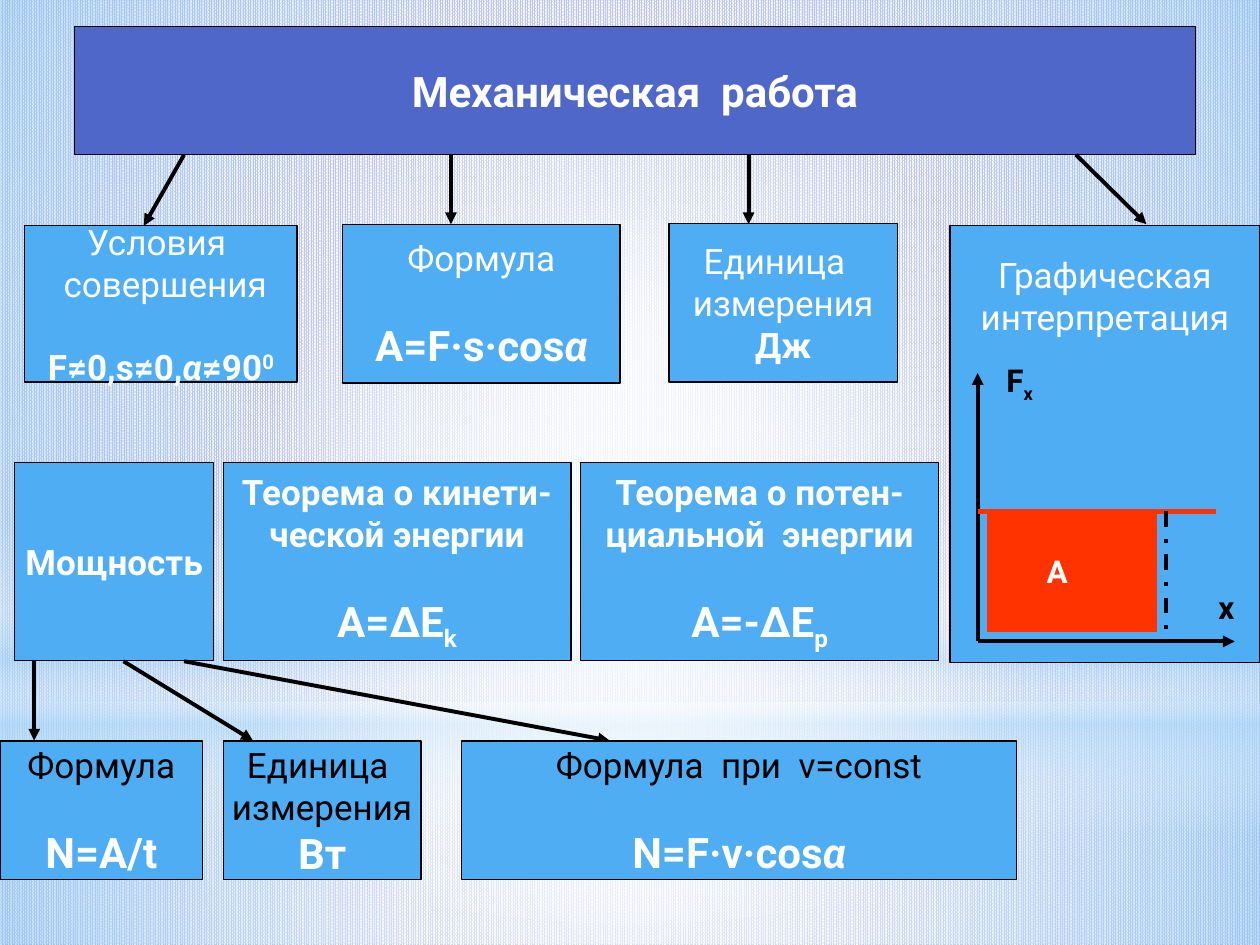
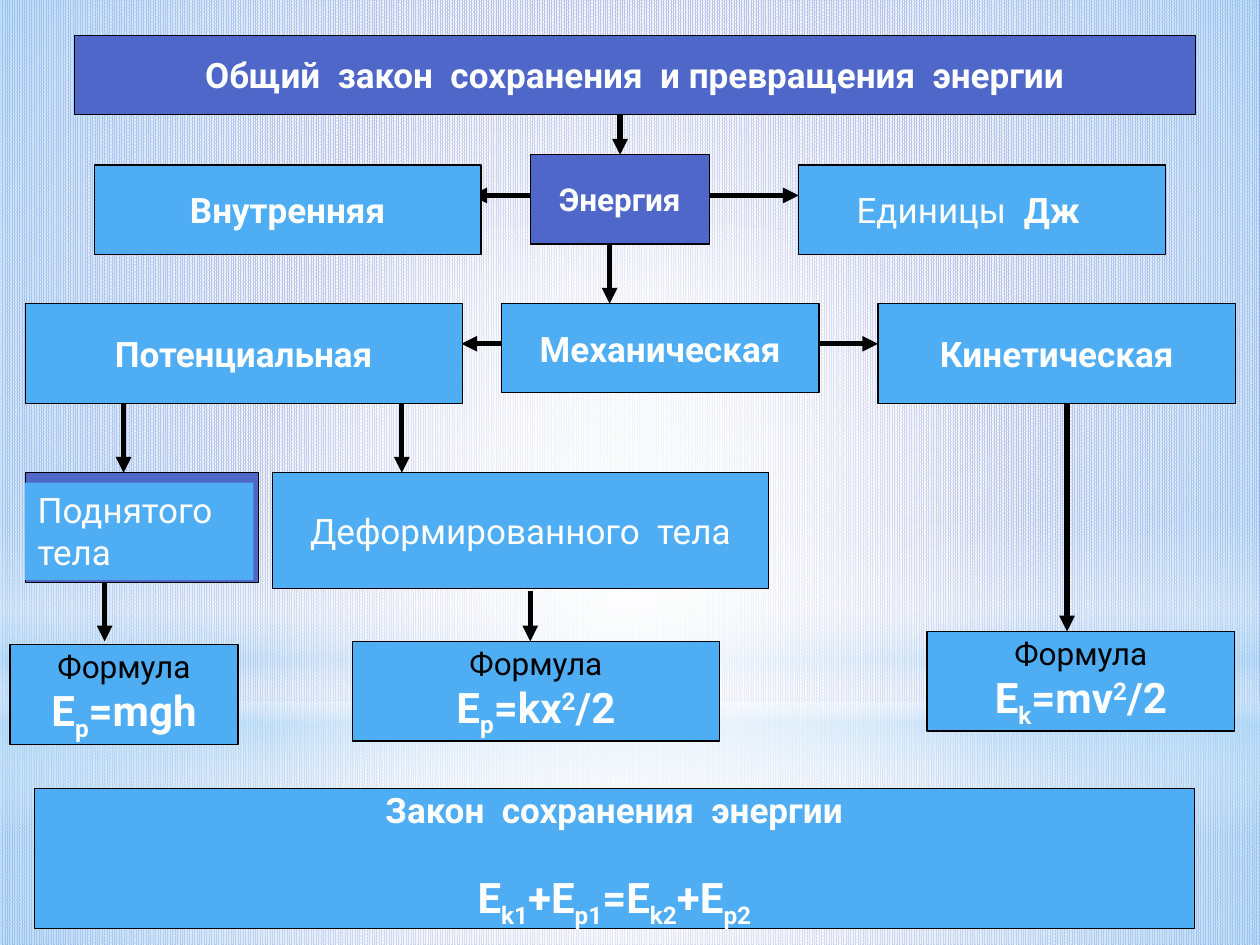
from collections import namedtuple
from functools import partial

from lxml import etree
from pptx import Presentation
from pptx.dml.color import RGBColor
from pptx.enum import dml, shapes, text
from pptx.oxml import parse_xml
from pptx.oxml.ns import nsdecls, qn
from pptx.util import Cm, Pt

INDIGO = RGBColor(0x4E, 0x67, 0xC8)
SKY = RGBColor(0x4F, 0xAD, 0xF3)
PALE = RGBColor(0xB4, 0xDC, 0xFA)
RED = RGBColor(0xFF, 0x33, 0x00)
WHITE = RGBColor(0xFF, 0xFF, 0xFF)
BLACK = RGBColor(0x00, 0x00, 0x00)
FONT = "Roboto"
BLANK_LINE = Pt(23.5)
CENTER, LEFT = text.PP_ALIGN.CENTER, text.PP_ALIGN.LEFT
MIDDLE, TOP = text.MSO_ANCHOR.MIDDLE, text.MSO_ANCHOR.TOP
RECTANGLE, OVAL = shapes.MSO_SHAPE.RECTANGLE, shapes.MSO_SHAPE.OVAL

Run = namedtuple("Run", "text size color bold italic base",
                 defaults=(20, WHITE, False, False, 0))
strong = partial(Run, bold=True)
formula = partial(strong, size=24)
sub = partial(formula, base=-25)
sup = partial(formula, base=30)
dark = partial(Run, color=BLACK)
axis_name = partial(strong, size=18, color=BLACK)


def write(frame, lines, align=CENTER, anchor=MIDDLE, wrap=False, gap=False):
    frame.word_wrap = wrap
    frame.auto_size = text.MSO_AUTO_SIZE.NONE
    frame.vertical_anchor = anchor
    for number, line in enumerate(lines):
        paragraph = frame.add_paragraph() if number else frame.paragraphs[0]
        paragraph.alignment = align
        for part in line:
            run = paragraph.add_run()
            run.text = part.text
            font = run.font
            font.name, font.size = FONT, Pt(part.size)
            font.bold, font.italic = part.bold, part.italic
            font.color.rgb = part.color
            if part.base:
                font._element.set("baseline", str(part.base * 1000))
    if gap:
        paragraph.space_before = BLANK_LINE


def paint(shape, fill, outline=BLACK):
    shape.fill.solid()
    shape.fill.fore_color.rgb = fill
    if outline is None:
        shape.line.fill.background()
    else:
        shape.line.color.rgb = outline
        shape.line.width = Pt(0.75)


class Region:
    def __init__(self, slide, left, top):
        self.slide, self.left, self.top = slide, left, top

    def at(self, x, y):
        return Cm(self.left + x), Cm(self.top + y)

    def box(self, x, y, width, height, *lines, fill=SKY, outline=BLACK, **layout):
        shape = self.slide.shapes.add_shape(
            RECTANGLE, *self.at(x, y), Cm(width), Cm(height))
        shape.shadow.inherit = False
        paint(shape, fill, outline)
        if lines:
            write(shape.text_frame, lines, **layout)
        return shape

    def label(self, x, y, width, height, *lines):
        holder = self.slide.shapes.add_textbox(
            *self.at(x, y), Cm(width), Cm(height))
        write(holder.text_frame, lines, align=LEFT, anchor=TOP)

    def line(self, start, end, width=2.25, color=BLACK, dash=None, arrow=False):
        connector = self.slide.shapes.add_connector(
            shapes.MSO_CONNECTOR.STRAIGHT, *self.at(*start), *self.at(*end))
        connector.line.color.rgb = color
        connector.line.width = Pt(width)
        if dash:
            connector.line.dash_style = dash
        if arrow:
            etree.SubElement(connector.line._get_or_add_ln(),
                             qn("a:tailEnd"), type="triangle")
        etree.SubElement(connector._element.spPr, qn("a:effectLst"))

    def arrow(self, start, end, width=2.25):
        self.line(start, end, width, arrow=True)


def gradient(stops, direction):
    entries = "".join(
        f'<a:gs pos="{place * 1000}"><a:srgbClr val="{color}">'
        f'<a:alpha val="{opacity * 1000}"/></a:srgbClr></a:gs>'
        for place, color, opacity in stops)
    return parse_xml(f'<a:gradFill {nsdecls("a")} rotWithShape="1">'
                     f'<a:gsLst>{entries}</a:gsLst>{direction}</a:gradFill>')


def decorate_master(master, slide):
    backdrop = master.background.fill
    backdrop.patterned()
    backdrop.pattern = dml.MSO_PATTERN.PERCENT_90
    backdrop.fore_color.rgb = INDIGO
    backdrop.back_color.rgb = WHITE

    radial = ('<a:path path="circle"><a:fillToRect l="50000" t="50000" '
              'r="50000" b="50000"/></a:path>')
    vertical = '<a:lin ang="5400000" scaled="0"/>'
    glows = [
        (RECTANGLE, 14.17, 4.88, radial,
         [(0, WHITE, 91), (37, WHITE, 76), (100, PALE, 79)]),
        (RECTANGLE, 0, 14.17, radial,
         [(0, WHITE, 89), (48, WHITE, 62), (100, PALE, 79)]),
        (RECTANGLE, 10.46, 6.35, vertical,
         [(0, WHITE, 0), (29, WHITE, 30), (45, PALE, 40),
          (55, WHITE, 26), (65, PALE, 60), (100, WHITE, 0)]),
        (OVAL, 4.45, 14.17, radial, [(0, WHITE, 100), (56, WHITE, 0)]),
    ]
    tree = master.element.cSld.spTree
    for order, (kind, top, height, direction, stops) in enumerate(glows):
        glow = slide.shapes.add_shape(kind, 0, Cm(top), Cm(25.4), Cm(height))
        glow.shadow.inherit = False
        glow.fill.background()
        glow.line.fill.background()
        props = glow._element.spPr
        props.replace(props.find(qn("a:noFill")), gradient(stops, direction))
        glow._element.nvSpPr.cNvPr.set("id", str(100 + order))
        tree.insert(2 + order, glow._element)


def header(slide, top, height, title):
    holder = slide.shapes.title
    holder.left, holder.top = Cm(1.5), Cm(top)
    holder.width, holder.height = Cm(22.6), Cm(height)
    paint(holder, INDIGO)
    write(holder.text_frame, [[title]])


def work_features(slide, left, top):
    region = Region(slide, left, top)
    for start, end in [((3.21, 0), (2.4, 1.43)), ((8.59, 0), (8.59, 1.4)),
                       ((14.59, 0), (14.59, 1.4)), ((21.19, 0), (22.61, 1.4))]:
        region.arrow(start, end)
    region.box(0, 1.43, 5.49, 3.15, [Run("Условия ")], [Run(" совершения")],
               [strong("F≠0,s≠0,"), strong("α", italic=True),
                strong("≠90", italic=False), strong("0", base=30)], gap=True)
    region.box(6.41, 1.4, 5.59, 3.2, [Run("Формула")],
               [formula("A=F·s·cos"), formula("α", italic=True)], gap=True)
    region.box(12.99, 1.38, 4.6, 3.2, [Run("Единица  ")],
               [Run("измерения")], [strong("Дж")])


def work_graph(slide, left, top):
    region = Region(slide, left, top)
    panel = region.box(0, 0, 6.25, 8.81, [Run("Графическая")],
                       [Run("интерпретация")], anchor=TOP)
    panel.text_frame.margin_top = Cm(0.56)
    origin = (0.56, 8.38)
    region.arrow(origin, (0.56, 2.97))
    region.arrow(origin, (5.74, 8.38))
    region.label(0.89, 2.61, 1.14, 1.02, [axis_name("F"), axis_name("x", base=-25)])
    region.label(5.16, 7.18, 1.09, 1.02, [axis_name("x")])
    region.line((0.56, 5.76), (5.36, 5.76), 3, RED)
    region.line((4.35, 5.76), (4.35, 8.38), dash=dml.MSO_LINE.DASH_DOT)
    work = region.box(0.76, 5.76, 3.4, 2.41, [strong("А", size=18)],
                      fill=RED, outline=RED, align=LEFT)
    work.text_frame.margin_left = Cm(1.19)


def theorems(slide, left, top):
    region = Region(slide, left, top)
    for x, width, first, second, energy, index in [
            (0, 7.01, "Теорема о кинети-", "ческой энергии", "A=ΔE", "k"),
            (7.21, 7.21, "Теорема о потен-", "циальной  энергии", "A=-ΔE", "p")]:
        region.box(x, 0, width, 3.99, [strong(first)], [strong(second)],
                   [formula(energy), sub(index)], gap=True)


def power(slide, left, top):
    region = Region(slide, left, top)
    region.box(0.3, 0, 4.01, 3.99, [strong("Мощность")])
    for start, end in [(0.69, 0.69), (2.49, 5.1), (3.71, 12.29)]:
        region.arrow((start, 4.01), (end, 5.61))
    region.box(0, 5.62, 4.09, 2.79, [dark("Формула")], [formula("N=A/t")], gap=True)
    region.box(4.5, 5.62, 3.99, 2.79, [dark("Единица ")],
               [dark("измерения")], [formula("Вт")])
    region.box(9.3, 5.62, 11.2, 2.79, [dark("Формула  при  v=const")],
               [formula("N=F·v·cos"), formula("α", italic=True)], gap=True)


def energy_forms(slide, left, top):
    region = Region(slide, left, top)
    for start, end in [((12.5, 0), (12.5, 0.81)), ((10.69, 1.63), (9.5, 1.63)),
                       ((14.3, 1.63), (16.1, 1.63)), ((12.29, 2.61), (12.29, 3.81))]:
        region.arrow(start, end, 3)
    region.box(10.69, 0.81, 3.61, 1.8, [strong("Энергия", size=18)], fill=INDIGO)
    region.box(1.9, 1.02, 7.8, 1.8, [strong("Внутренняя")])
    units = region.box(16.1, 1.02, 7.39, 1.8, [Run("Единицы  "), strong("Дж")])
    units.text_frame.margin_right = Cm(0.8)


def mechanical_energy(slide, left, top):
    region = Region(slide, left, top)
    region.arrow((10.11, 0.81), (9.3, 0.81), 3)
    region.arrow((16.51, 0.81), (17.7, 0.81), 3)
    region.box(10.11, 0, 6.4, 1.8, [strong("Механическая")])
    region.box(0.51, 0, 8.81, 2.01, [strong("Потенциальная")])
    region.box(17.7, 0, 7.21, 2.01, [strong("Кинетическая")])


def energy_formulas(slide, left, top):
    region = Region(slide, left, top)
    for x, start, end in [(2.49, 0, 1.4), (8.1, 0, 1.4), (21.51, 0, 4.6),
                          (2.11, 3.6, 4.8), (10.69, 3.78, 4.8)]:
        region.arrow((x, start), (x, end), 3)
    region.box(0.51, 1.4, 4.7, 2.21, fill=INDIGO)
    region.box(0.51, 1.6, 4.6, 1.96, [Run("Поднятого  тела")],
               outline=None, align=LEFT, anchor=TOP, wrap=True)
    region.box(5.49, 1.4, 10.01, 2.34, [Run("Деформированного  тела")])

    halved_square = [sup("2"), formula("/2")]
    for x, y, width, index, value in [
            (0.2, 4.87, 4.6, "p", [formula("=mgh")]),
            (7.11, 4.8, 7.39, "p", [formula("=kx")] + halved_square),
            (18.69, 4.6, 6.2, "k", [formula("=mv")] + halved_square)]:
        region.box(x, y, width, 2.01, [dark("Формула", size=18)],
                   [formula("E"), sub(index)] + value)


def conservation_law(slide, left, top):
    terms = [("E", "k1"), ("+E", "p1"), ("=E", "k2"), ("+E", "p2")]
    balance = [run for energy, index in terms
               for run in (formula(energy), sub(index))]
    Region(slide, left, top).box(0, 0, 23.39, 2.82,
                                 [strong("Закон  сохранения  энергии")],
                                 balance, gap=True)


def work_slide(slide):
    header(slide, 0.53, 2.59, formula("Механическая  работа"))
    work_features(slide, 0.5, 3.12)
    work_graph(slide, 19.15, 4.55)
    power(slide, 0, 9.32)
    theorems(slide, 4.5, 9.32)


def energy_slide(slide):
    header(slide, 0.71, 1.6,
           strong("Общий  закон  сохранения  и превращения  энергии"))
    energy_forms(slide, 0, 2.31)
    mechanical_energy(slide, 0, 6.12)
    energy_formulas(slide, 0, 8.13)
    conservation_law(slide, 0.69, 15.9)


def main():
    deck = Presentation()
    deck.slide_width, deck.slide_height = Cm(25.4), Cm(19.05)
    title_only = deck.slide_layouts.get_by_name("Title Only")
    work, energy = (deck.slides.add_slide(title_only) for _ in range(2))
    decorate_master(deck.slide_master, work)
    work_slide(work)
    energy_slide(energy)
    deck.save("out.pptx")


if __name__ == "__main__":
    main()
